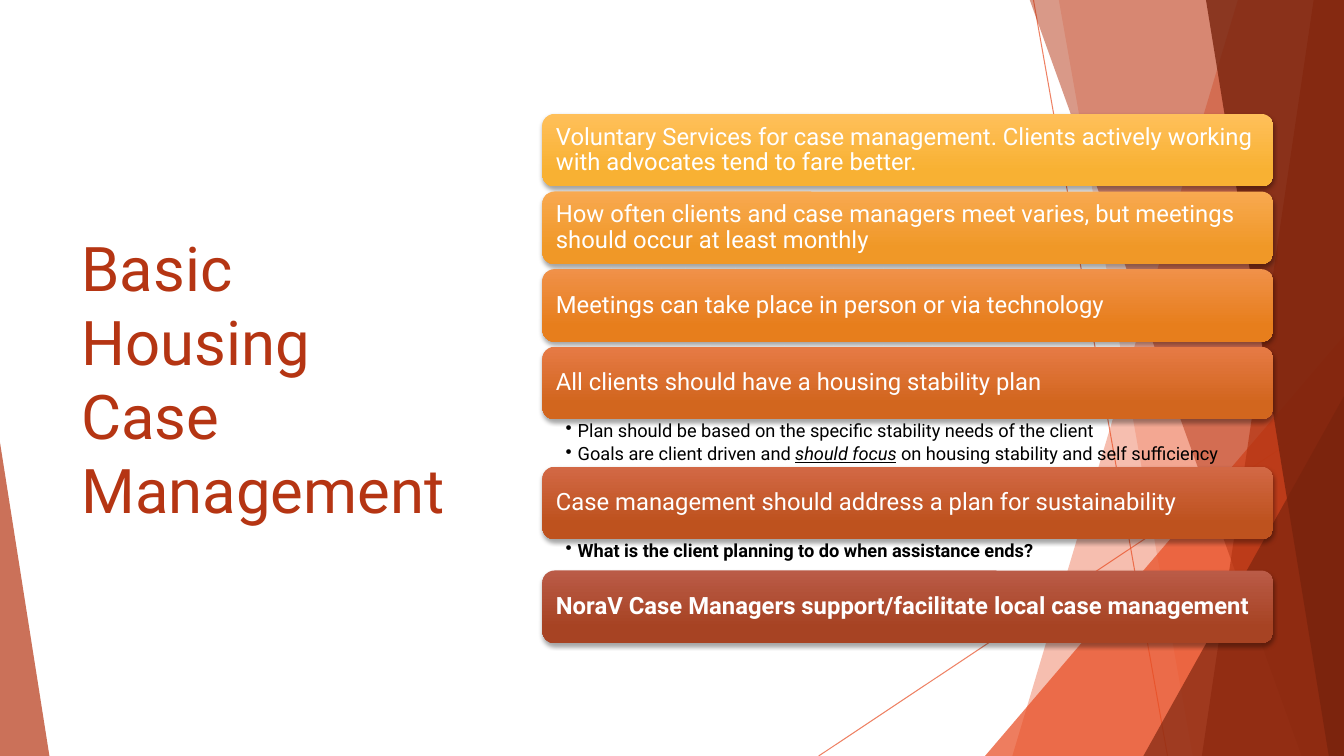
import lxml.etree
import pptx
import pptx.dml.color
import pptx.enum.shapes
import pptx.enum.text
import pptx.oxml.ns
import pptx.util

Inches = pptx.util.Inches
Pt = pptx.util.Pt
RGBColor = pptx.dml.color.RGBColor
Shapes = pptx.enum.shapes.MSO_SHAPE
Anchor = pptx.enum.text.MSO_ANCHOR
qn = pptx.oxml.ns.qn

ORANGE = RGBColor(0xE8, 0x4C, 0x22)
RUST = RGBColor(0xB5, 0x35, 0x13)
MAROON = RGBColor(0x78, 0x23, 0x0D)
WHITE = RGBColor(0xFF, 0xFF, 0xFF)
BLACK = RGBColor(0x00, 0x00, 0x00)

WIDTH, HEIGHT = 13.33, 7.5
CARD_LEFT, CARD_TOP = 5.38, 1.13
CARD_WIDTH, CARD_HEIGHT, CARD_GAP = 7.25, 0.72, 0.05

# Facet bands: top-left x, top-right x, bottom-left x, colour, opacity
BANDS_BEHIND = [
    (12.28, 10.04, ORANGE, 36),
    (10.5, 11.83, ORANGE, 20),
]
BANDS_FRONT = [
    (10.21, 12.91, RUST, 50),
    (13.03, 11.92, RUST, 70),
    (11.96, 13.18, MAROON, 80),
]

# Card: text, top colour, bottom colour, bold
CARDS = [
    ("Voluntary Services for case management. Clients actively working with advocates tend to fare better.",
     RGBColor(0xFF, 0xC0, 0x5A), RGBColor(0xF8, 0xB1, 0x33), False),
    ("How often clients and case managers meet varies, but meetings should occur at least monthly",
     RGBColor(0xF8, 0xA9, 0x50), RGBColor(0xF0, 0x98, 0x27), False),
    ("Meetings can take place in person or via technology",
     RGBColor(0xF0, 0x91, 0x49), RGBColor(0xE7, 0x7E, 0x1C), False),
    ("All clients should have a housing stability plan",
     RGBColor(0xE6, 0x7A, 0x45), RGBColor(0xD2, 0x66, 0x1E), False),
    ("Case management should address a plan for sustainability",
     RGBColor(0xD2, 0x68, 0x45), RGBColor(0xBE, 0x52, 0x1E), False),
    ("NoraV Case Managers support/facilitate local case management",
     RGBColor(0xBA, 0x5B, 0x47), RGBColor(0xA7, 0x43, 0x23), True),
]

# Card index: height, bold, bullets as lists of (text, emphasised)
DETAILS = {
    3: (0.47, False, [
        [("Plan should be based on the specific stability needs of the client", False)],
        [("Goals are client driven and ", False), ("should focus", True),
         (" on housing stability and self sufficiency", False)],
    ]),
    4: (0.31, True, [
        [("What is the client planning to do when assistance ends?", False)],
    ]),
}


class SlideBuilder:
    font_name = "Roboto"

    def __init__(self, page):
        self.page = page

    def set_opacity(self, shape, percent):
        for color in shape._element.iter(qn("a:srgbClr")):
            lxml.etree.SubElement(color, qn("a:alpha"), val=str(percent * 1000))

    def paint(self, shape, color, opacity):
        shape.shadow.inherit = False
        shape.fill.solid()
        shape.fill.fore_color.rgb = color
        shape.line.fill.background()
        self.set_opacity(shape, opacity)

    def line(self, start, end):
        connector = self.page.shapes.add_connector(
            pptx.enum.shapes.MSO_CONNECTOR.STRAIGHT, *map(Inches, start + end))
        connector.line.color.rgb = ORANGE
        connector.line.width = Pt(0.75)
        self.set_opacity(connector, 70)
        lxml.etree.SubElement(connector._element.spPr, qn("a:effectLst"))

    def band(self, top_x, bottom_x, color, opacity):
        """Draw a facet from a slanted left edge to the slide's right edge."""
        corners = [(Inches(x), Inches(y)) for x, y in (
            (top_x, -0.01), (WIDTH, -0.01), (WIDTH, HEIGHT), (bottom_x, HEIGHT))]
        outline = self.page.shapes.build_freeform(*corners[0])
        outline.add_line_segments(corners[1:], close=True)
        self.paint(outline.convert_to_shape(), color, opacity)

    def triangle(self, left, top, width, peak, color, opacity):
        """Draw a triangle standing on the slide's bottom edge."""
        shape = self.page.shapes.add_shape(
            Shapes.ISOSCELES_TRIANGLE, *map(Inches, (left, top, width, HEIGHT - top)))
        shape.adjustments[0] = peak
        self.paint(shape, color, opacity)

    def style_font(self, paragraph, size, color, bold=False):
        font = paragraph.font
        font.name, font.size, font.bold = self.font_name, Pt(size), bold
        font.color.rgb = color

    def frame(self, shape, insets, anchor):
        frame = shape.text_frame
        frame.word_wrap = True
        frame.vertical_anchor = anchor
        (frame.margin_left, frame.margin_top,
         frame.margin_right, frame.margin_bottom) = map(Inches, insets)
        return frame

    def title(self, text, left, top, width, height):
        box = self.page.shapes.add_textbox(*map(Inches, (left, top, width, height)))
        paragraph = self.frame(box, (0.1, 0.05, 0.1, 0.05), Anchor.MIDDLE).paragraphs[0]
        paragraph.text = text
        self.style_font(paragraph, 44, RUST)

    def card(self, top, text, top_color, bottom_color, bold):
        shape = self.page.shapes.add_shape(
            Shapes.ROUNDED_RECTANGLE,
            *map(Inches, (CARD_LEFT, top, CARD_WIDTH, CARD_HEIGHT)))
        shape.fill.gradient()
        shape.fill.gradient_angle = 270
        stops = zip(shape.fill.gradient_stops, (0, 0.78), (top_color, bottom_color))
        for stop, position, color in stops:
            stop.position = position
            stop.color.rgb = color
        shape.line.fill.background()
        self.drop_shadow(shape)
        paragraph = self.frame(shape, (0.1, 0.1, 0.1, 0.1), Anchor.MIDDLE).paragraphs[0]
        paragraph.text = text
        paragraph.alignment = pptx.enum.text.PP_ALIGN.LEFT
        paragraph.line_spacing = 0.9
        self.style_font(paragraph, 17, WHITE, bold)

    def drop_shadow(self, shape):
        shape.shadow.inherit = False
        effects = shape._element.spPr.find(qn("a:effectLst"))
        shadow = lxml.etree.SubElement(
            effects, qn("a:outerShdw"), blurRad=str(Pt(3)), dist=str(Pt(2)),
            dir="5400000", rotWithShape="0")
        color = lxml.etree.SubElement(shadow, qn("a:srgbClr"), val=str(BLACK))
        lxml.etree.SubElement(color, qn("a:alpha"), val="35000")

    def bullets(self, top, height, bold, items):
        box = self.page.shapes.add_textbox(
            *map(Inches, (CARD_LEFT, top, CARD_WIDTH, height)))
        frame = self.frame(box, (0.23, 0.02, 0.13, 0.02), Anchor.TOP)
        for index, spans in enumerate(items):
            paragraph = frame.add_paragraph() if index else frame.paragraphs[0]
            properties = paragraph._p.get_or_add_pPr()
            properties.set("marL", str(Inches(0.12)))
            properties.set("indent", str(Inches(-0.12)))
            lxml.etree.SubElement(properties, qn("a:buChar"), char="•")
            paragraph.line_spacing = 0.9
            paragraph.space_after = Pt(3)
            self.style_font(paragraph, 13, BLACK, bold)
            for text, emphasised in spans:
                span = paragraph.add_run()
                span.text = text
                if emphasised:
                    span.font.italic = span.font.underline = True


def main():
    deck = pptx.Presentation()
    deck.slide_width, deck.slide_height = Inches(WIDTH), Inches(HEIGHT)
    builder = SlideBuilder(deck.slides.add_slide(deck.slide_layouts[6]))

    builder.line((10.25, 0), (11.58, HEIGHT))
    builder.line((WIDTH, 4.03), (8.12, HEIGHT))
    for band in BANDS_BEHIND:
        builder.band(*band)
    builder.triangle(9.77, 3.33, 3.56, 1, ORANGE, 72)
    for band in BANDS_FRONT:
        builder.band(*band)
    builder.triangle(11.34, 3.93, 1.99, 1, MAROON, 66)
    builder.triangle(0, 4.39, 0.49, 0, RUST, 70)

    builder.title("Basic\vHousing Case Management", 0.71, 1.51, 3.88, 4.48)
    top = CARD_TOP
    for index, card in enumerate(CARDS):
        builder.card(top, *card)
        top += CARD_HEIGHT
        if index in DETAILS:
            builder.bullets(top, *DETAILS[index])
            top += DETAILS[index][0]
        else:
            top += CARD_GAP
    deck.save("out.pptx")


if __name__ == "__main__":
    main()
